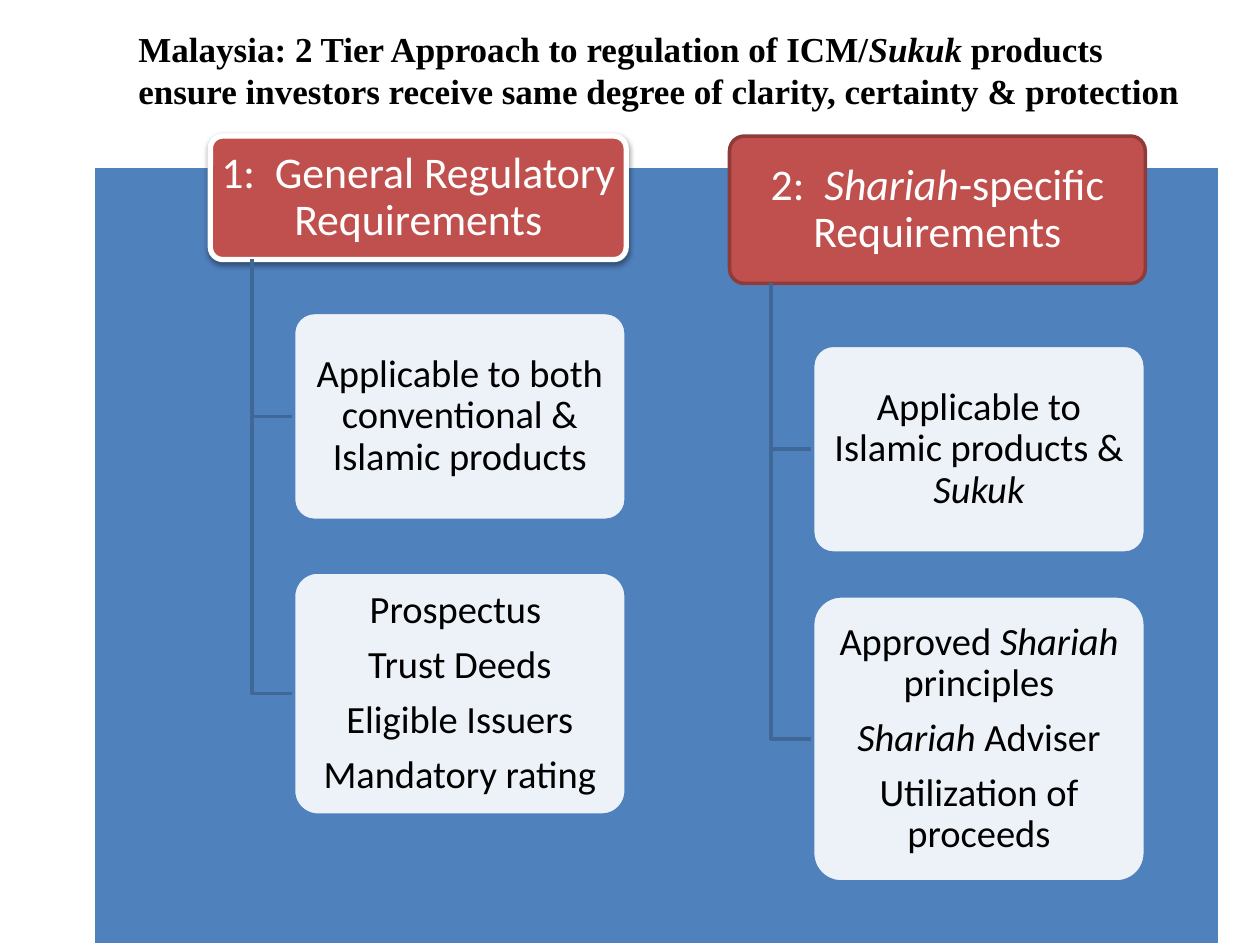
"""Build the slide on the two-tier regulation of Islamic capital market products."""
from lxml import etree
from pptx import Presentation
from pptx import util as u
from pptx.dml.color import RGBColor
from pptx.enum import shapes, text
from pptx.oxml import parse_xml
from pptx.oxml.ns import nsdecls, qn

BLUE, RED, WHITE, BLACK = "4F81BD", "C0504D", "FFFFFF", "000000"
TITLE = [("Malaysia: 2 Tier Approach to regulation of ICM/", False), ("Sukuk", True),
         (" products ensure investors receive same degree of clarity, certainty & protection", False)]
TIERS = [
    {"left": 1.67, "height": 0.98, "border": (WHITE, 3), "raised": True,
     "heading": [("1:  General Regulatory Requirements", False)],
     "details": [
         (2.48, 1.65, [[("Applicable to both conventional & Islamic products", False)]]),
         (4.54, 1.93, [[("Prospectus ", False)], [("Trust Deeds", False)],
                       [("Eligible Issuers", False)], [("Mandatory rating", False)]])]},
    {"left": 5.79, "height": 1.17, "border": ("8E3B39", 2), "raised": False,
     "heading": [("2:  ", False), ("Shariah", True), ("-specific Requirements", False)],
     "details": [
         (2.74, 1.65, [[("Applicable to Islamic products & ", False), ("Sukuk", True)]]),
         (4.73, 2.27, [[("Approved ", False), ("Shariah", True), (" principles", False)],
                       [("Shariah", True), (" Adviser", False)],
                       [("Utilization of proceeds", False)]])]},
]


def paint(target, colour):
    """Give a fill a solid colour."""
    target.solid()
    target.fore_color.rgb = RGBColor.from_string(colour)


def outline(shape, colour, width):
    """Set the line colour and width of a shape."""
    paint(shape.line.fill, colour)
    shape.line.width = u.Pt(width)


def add_runs(para, runs, font, size, colour, bold=False):
    """Add (wording, italic) runs to a paragraph."""
    for wording, italic in runs:
        span = para.add_run()
        span.text = wording
        span.font.name = font
        span.font.size = u.Pt(size)
        span.font.bold = bold
        span.font.italic = italic
        span.font.color.rgb = RGBColor.from_string(colour)


def add_title(page):
    """Add the slide title."""
    box = page.shapes.add_textbox(u.Inches(1), u.Inches(0.17), u.Inches(8.5), u.Inches(0.77))
    box.text_frame.word_wrap = True
    box.text_frame.auto_size = text.MSO_AUTO_SIZE.SHAPE_TO_FIT_TEXT
    add_runs(box.text_frame.paragraphs[0], TITLE, "Times New Roman", 20, BLACK, True)


def add_panel(page):
    """Add the one-cell table that backs the diagram."""
    frame = page.shapes.add_table(1, 1, u.Inches(0.75), u.Inches(1.33),
                                  u.Inches(8.92), u.Inches(6.17))
    frame.table.first_row = frame.table.horz_banding = False
    cell = frame.table.cell(0, 0)
    paint(cell.fill, BLUE)
    properties = cell._tc.get_or_add_tcPr()
    for place, (side, width) in enumerate([("L", 1), ("R", 1), ("T", 1), ("B", 3)]):
        properties.insert(place, parse_xml(
            f'<a:ln{side} {nsdecls("a")} w="{u.Pt(width)}"><a:solidFill>'
            f'<a:srgbClr val="{WHITE}"/></a:solidFill></a:ln{side}>'))


def add_card(page, left, top, width, height, fill, border, paragraphs, size, colour):
    """Add a rounded box with centred paragraphs."""
    card = page.shapes.add_shape(shapes.MSO_SHAPE.ROUNDED_RECTANGLE, u.Inches(left),
                                 u.Inches(top), u.Inches(width), u.Inches(height))
    card.adjustments[0] = 0.1
    card.shadow.inherit = False
    paint(card.fill, fill)
    outline(card, *border)
    frame = card.text_frame
    frame.word_wrap = True
    frame.vertical_anchor = text.MSO_ANCHOR.MIDDLE
    frame.margin_left = frame.margin_right = u.Inches(0.05)
    frame.margin_top = frame.margin_bottom = u.Inches(0.03)
    for index, runs in enumerate(paragraphs):
        para = frame.add_paragraph() if index else frame.paragraphs[0]
        para.alignment = text.PP_ALIGN.CENTER
        para.line_spacing = 0.9
        para.space_after = u.Pt(7.5)
        add_runs(para, runs, "Calibri", size, colour)
    return card


def make_translucent(shape, percent):
    """Set the opacity of a solid fill."""
    colour = shape.fill._xPr.find(qn("a:solidFill"))[0]
    etree.SubElement(colour, qn("a:alpha"), val=str(percent * 1000))


def add_drop_shadow(shape):
    """Cast a soft shadow straight down."""
    shape._element.spPr.find(qn("a:effectLst")).append(parse_xml(
        f'<a:outerShdw {nsdecls("a")} blurRad="{u.Pt(3.1)}" dist="{u.Pt(1.6)}" '
        f'dir="5400000" rotWithShape="0"><a:srgbClr val="{BLACK}">'
        '<a:alpha val="38000"/></a:srgbClr></a:outerShdw>'))


def add_elbow(page, left, top, right, bottom):
    """Add an open line that runs down and then right."""
    builder = page.shapes.build_freeform(u.Inches(left), u.Inches(top))
    builder.add_line_segments([(u.Inches(left), u.Inches(bottom)),
                               (u.Inches(right), u.Inches(bottom))], close=False)
    elbow = builder.convert_to_shape()
    elbow.shadow.inherit = False
    elbow.fill.background()
    outline(elbow, "3F6797", 2)


def add_tier(page, tier):
    """Add a heading with its detail cards hanging from it."""
    left, top, width, indent = tier["left"], 1.08, 3.3, 0.33
    heading = add_card(page, left, top, width, tier["height"], RED, tier["border"],
                       [tier["heading"]], 25, WHITE)
    if tier["raised"]:
        add_drop_shadow(heading)
    card_left = left + 2 * indent
    for card_top, height, paragraphs in tier["details"]:
        add_elbow(page, left + indent, top + tier["height"], card_left, card_top + height / 2)
        card = add_card(page, card_left, card_top, width - 2 * indent, height, WHITE,
                        (BLUE, 2), paragraphs, 22, BLACK)
        make_translucent(card, 90)


def main():
    """Build and save the deck."""
    deck = Presentation()
    deck.slide_width, deck.slide_height = u.Inches(10), u.Inches(7.5)
    page = deck.slides.add_slide(deck.slide_layouts[6])
    add_title(page)
    add_panel(page)
    for tier in TIERS:
        add_tier(page, tier)
    deck.save("out.pptx")


if __name__ == "__main__":
    main()
